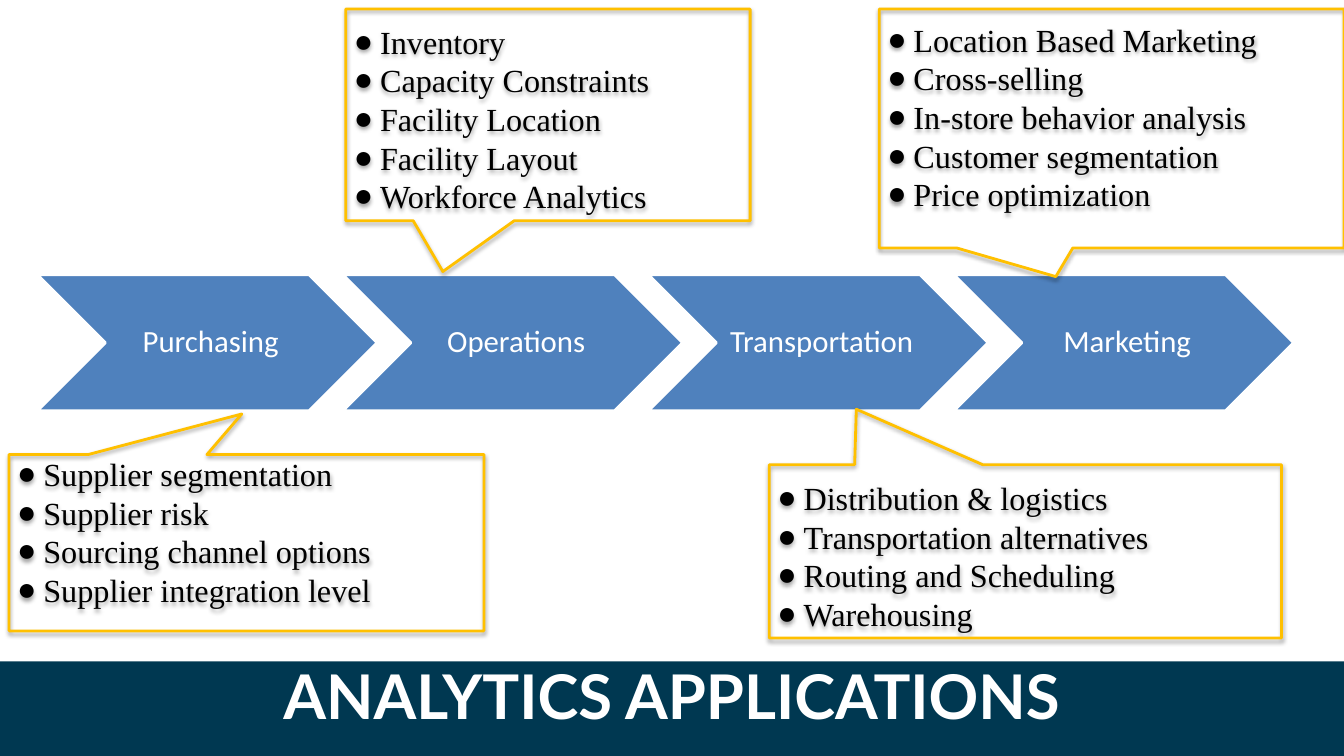
from dataclasses import dataclass

from lxml.etree import SubElement as Sub
from pptx import Presentation
from pptx.dml.color import RGBColor as RGB
from pptx.enum.shapes import MSO_SHAPE as Kind
from pptx.enum.text import MSO_ANCHOR as Anchor, MSO_AUTO_SIZE as Fit, PP_ALIGN as Align
from pptx.oxml.ns import qn
from pptx.util import Inches, Pt

WIDE, HIGH = Inches(13.33), Inches(7.5)


@dataclass(frozen=True)
class Theme:
    """Colours, fonts and sizes of the slide."""
    blue: RGB = RGB.from_string("4F81BD")
    navy: RGB = RGB.from_string("003851")
    gold: RGB = RGB.from_string("FFC000")
    white: RGB = RGB.from_string("FFFFFF")
    black: RGB = RGB.from_string("000000")
    head: tuple = ("Lato", 44)
    step: tuple = ("Calibri", 22)
    note: tuple = ("Times New Roman", 23)
    line: float = 2


THEME = Theme()

STEPS = ["Purchasing", "Operations", "Transportation", "Marketing"]

NOTES = [
    ((0.68, 60.13, 35.33, 23.33), (-0.01, -0.73), 0,
     ["Supplier segmentation", "Supplier risk", "Sourcing channel options",
      "Supplier integration level"]),
    ((25.73, 1.2, 30.08, 28), (-0.26, 0.74), 1.73,
     ["Inventory", "Capacity Constraints", "Facility Location",
      "Facility Layout", "Workforce Analytics"]),
    ((65.42, 1.2, 34.58, 31.6), (-0.12, 0.62), 1.47,
     ["Location Based Marketing", "Cross-selling", "In-store behavior analysis",
      "Customer segmentation", "Price optimization"]),
    ((57.24, 61.47, 38.11, 22.93), (-0.33, -0.82), 1.8,
     ["Distribution & logistics", "Transportation alternatives",
      "Routing and Scheduling", "Warehousing"]),
]


def across(share):
    """Turn a percentage of the slide's width into a length."""
    return int(WIDE * share / 100)


def down(share):
    """Turn a percentage of the slide's height into a length."""
    return int(HIGH * share / 100)


def place(box):
    """Turn a box of percentages into left, top, width and height."""
    left, top, width, height = box
    return across(left), down(top), across(width), down(height)


def style(para, face, color, align, bold=False):
    """Set the font and alignment of a paragraph."""
    para.alignment = align
    font = para.font
    font.name, font.size = face[0], Pt(face[1])
    font.bold, font.color.rgb = bold, color


def inset(frame, left, top, right, low):
    """Set the margins of a text frame in inches."""
    frame.margin_left, frame.margin_top = Inches(left), Inches(top)
    frame.margin_right, frame.margin_bottom = Inches(right), Inches(low)


def shade(shape):
    """Give a shape a soft shadow below it."""
    shape.shadow.inherit = False
    host = shape._element.spPr.find(qn("a:effectLst"))
    drop = Sub(host, qn("a:outerShdw"), blurRad=str(Pt(3.1)), dist=str(Pt(1.8)),
               dir="5400000", rotWithShape="0")
    tint = Sub(drop, qn("a:srgbClr"), val=str(THEME.black))
    Sub(tint, qn("a:alpha"), val="35000")


def bullet(para):
    """Give a paragraph a round bullet and a hanging indent."""
    props = para._p.get_or_add_pPr()
    props.set("marL", str(Inches(0.26)))
    props.set("indent", str(-Inches(0.26)))
    Sub(props, qn("a:buFont"), typeface=THEME.note[0])
    Sub(props, qn("a:buChar"), char="●")


def chain(slide, box, names):
    """Draw the row of process chevrons inside a box."""
    left, top, width, height = box
    span = width / (len(names) - 0.89)
    pitch = (width - span) / (len(names) - 1)
    span = 25.28
    pitch = (width - span) / (len(names) - 1)
    for col, name in enumerate(names):
        shape = slide.shapes.add_shape(
            Kind.CHEVRON, *place((left + col * pitch, top, span, height)))
        shape.shadow.inherit = False
        shape.fill.solid()
        shape.fill.fore_color.rgb = THEME.blue
        shape.line.color.rgb, shape.line.width = THEME.white, Pt(THEME.line)
        frame = shape.text_frame
        frame.word_wrap, frame.vertical_anchor = True, Anchor.MIDDLE
        inset(frame, 0.1, 0.03, 0.03, 0.03)
        para = frame.paragraphs[0]
        para.text, para.line_spacing = name, 0.9
        style(para, THEME.step, THEME.white, Align.CENTER)


def callout(slide, box, tip, drop, items):
    """Draw a bulleted callout whose tip points at its step."""
    shape = slide.shapes.add_shape(Kind.RECTANGULAR_CALLOUT, *place(box))
    shape.adjustments[0], shape.adjustments[1] = tip
    shape.fill.background()
    shape.line.color.rgb, shape.line.width = THEME.gold, Pt(THEME.line)
    shade(shape)
    frame = shape.text_frame
    frame.word_wrap, frame.vertical_anchor = True, Anchor.TOP
    inset(frame, 0.08, 0, 0.08, 0)
    frame.margin_top = down(drop)
    for row, item in enumerate(items):
        para = frame.add_paragraph() if row else frame.paragraphs[0]
        para.text = item
        bullet(para)
        style(para, THEME.note, THEME.black, Align.LEFT)


def banner(slide, box, text):
    """Turn the title into a band across the foot of the slide."""
    title = slide.shapes.title
    title.left, title.top, title.width, title.height = place(box)
    title.fill.solid()
    title.fill.fore_color.rgb = THEME.navy
    frame = title.text_frame
    frame.word_wrap, frame.auto_size = True, Fit.NONE
    frame.vertical_anchor = Anchor.TOP
    inset(frame, 0.1, 0.05, 0.1, 0.05)
    para = frame.paragraphs[0]
    para.text, para.line_spacing = text, 0.9
    style(para, THEME.head, THEME.white, Align.CENTER, bold=True)


def main():
    """Build the slide and save it."""
    deck = Presentation()
    deck.slide_width, deck.slide_height = WIDE, HIGH
    slide = deck.slides.add_slide(deck.slide_layouts[5])
    chain(slide, (2.78, 36.33, 93.47, 18), STEPS)
    for note in NOTES:
        callout(slide, *note)
    banner(slide, (0, 87.47, 100, 12.53), "ANALYTICS APPLICATIONS")
    deck.save("out.pptx")


if __name__ == "__main__":
    main()
